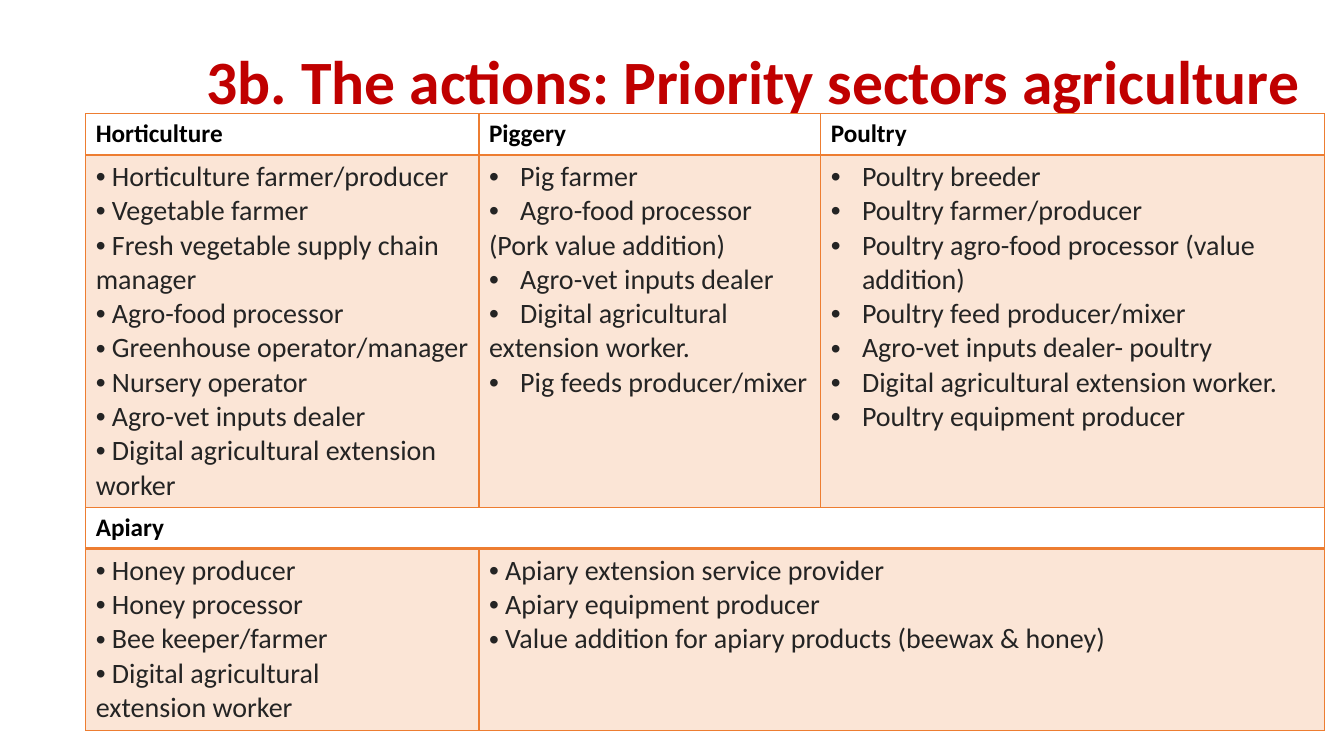
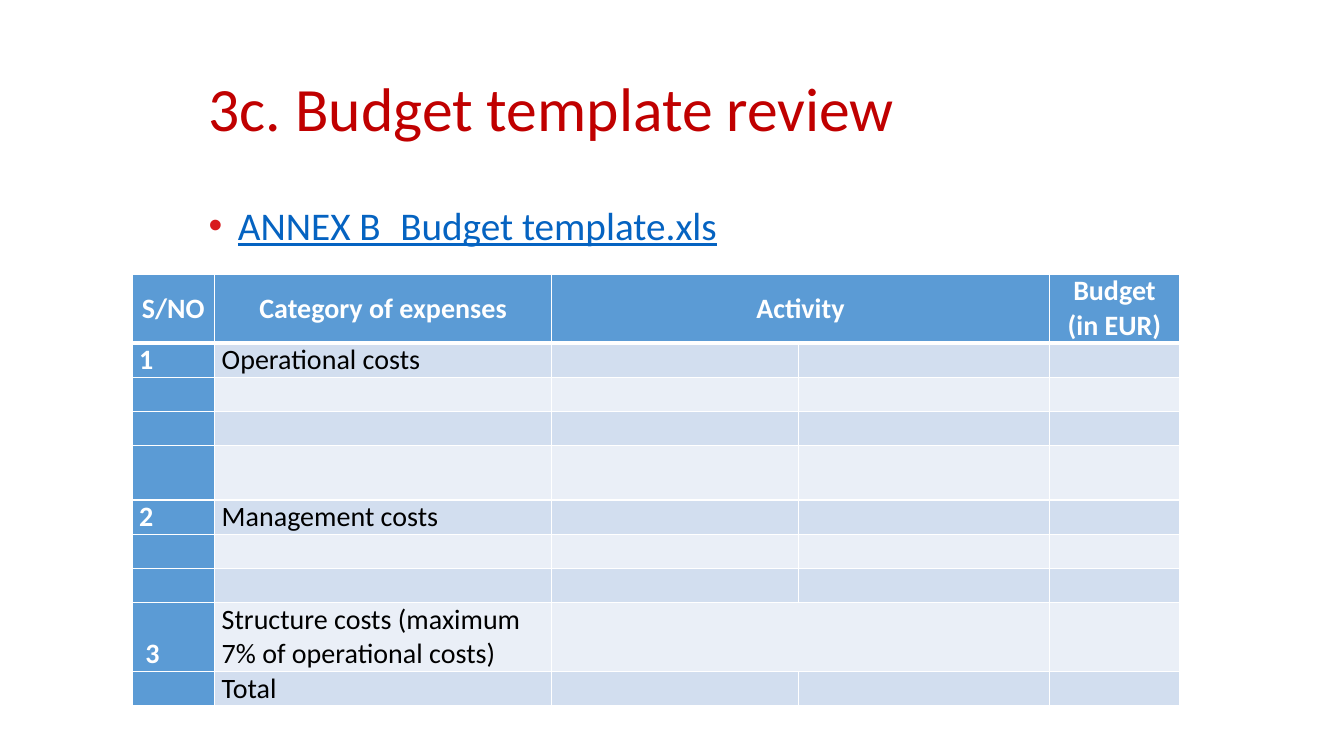
from dataclasses import dataclass
from typing import NamedTuple, Optional

from lxml.etree import SubElement
from pptx import Presentation
from pptx.dml.color import RGBColor
from pptx.enum.text import MSO_ANCHOR as Anchor, MSO_AUTO_SIZE as AutoSize, PP_ALIGN as Align
from pptx.oxml.ns import qn
from pptx.util import Inches, Pt

FONT = "Calibri"
RED = RGBColor(0xC0, 0x00, 0x00)
BULLET_RED = RGBColor(0xD8, 0x1A, 0x1C)
LINK = RGBColor(0x05, 0x63, 0xC1)
BLACK = RGBColor(0x00, 0x00, 0x00)
INK = RGBColor(0x24, 0x24, 0x24)
WHITE = RGBColor(0xFF, 0xFF, 0xFF)
ORANGE = RGBColor(0xED, 0x7D, 0x31)
PEACH = RGBColor(0xFB, 0xE5, 0xD6)
BLUE = RGBColor(0x5B, 0x9B, 0xD5)
BANDS = (RGBColor(0xEA, 0xEF, 0xF7), RGBColor(0xD2, 0xDE, 0xEF))


class Box(NamedTuple):
    left: float
    top: float
    width: float
    height: float


class Line(NamedTuple):
    text: str
    bullet: bool = True


@dataclass
class Sector:
    row: int
    col: int
    title: str
    lines: list
    hang: float = 0


SECTORS = [
    Sector(0, 0, "Horticulture", [
        Line("Horticulture farmer/producer"),
        Line("Vegetable farmer"),
        Line("Fresh vegetable supply chain manager"),
        Line("Agro-food processor"),
        Line("Greenhouse operator/manager"),
        Line("Nursery operator"),
        Line("Agro-vet inputs dealer"),
        Line("Digital agricultural extension worker"),
    ]),
    Sector(0, 1, "Piggery", [
        Line("Pig farmer"),
        Line("Agro-food processor"),
        Line("(Pork value addition)", False),
        Line("Agro-vet inputs dealer"),
        Line("Digital agricultural"),
        Line("extension worker.", False),
        Line("Pig feeds producer/mixer"),
    ], 0.31),
    Sector(0, 2, "Poultry", [
        Line("Poultry breeder"),
        Line("Poultry farmer/producer"),
        Line("Poultry agro-food processor (value addition)"),
        Line("Poultry feed producer/mixer"),
        Line("Agro-vet inputs dealer- poultry"),
        Line("Digital agricultural extension worker."),
        Line("Poultry equipment producer"),
    ], 0.31),
    Sector(2, 0, "Apiary", [
        Line("Honey producer"),
        Line("Honey processor"),
        Line("Bee keeper/farmer"),
        Line("Digital agricultural"),
        Line("extension worker", False),
    ]),
    Sector(2, 1, "", [
        Line("Apiary extension service provider"),
        Line("Apiary equipment producer"),
        Line("Value addition for apiary products (beewax & honey)"),
    ]),
]

BUDGET_HEADS = ("S/NO", "Category of expenses", "Activity", "", "Budget (in EUR)")
BUDGET_ROWS = {
    1: ("1", "Operational costs"),
    5: ("2", "Management costs"),
    8: (" 3", "Structure costs (maximum 7% of operational costs)"),
    9: ("", "Total"),
}


def write(p, text: str, *, size: float, color: RGBColor, bold: bool = False,
          underline: bool = False, align: Align = Align.LEFT, spacing: float = 1,
          bullet: bool = False, bullet_color: Optional[RGBColor] = None,
          hang: float = 0) -> None:
    """Fill a paragraph with one formatted run."""
    p.alignment, p.line_spacing, p.space_before = align, spacing, Pt(0)
    pr = p._p.get_or_add_pPr()
    if bullet:
        pr.set("marL", str(Inches(hang)))
        pr.set("indent", str(-Inches(hang)))
        if bullet_color:
            SubElement(SubElement(pr, qn("a:buClr")), qn("a:srgbClr"), val=str(bullet_color))
        SubElement(pr, qn("a:buFont"), typeface="Arial")
        SubElement(pr, qn("a:buChar"), char="•")
    r = p.add_run()
    r.text = text
    f = r.font
    f.name, f.size, f.bold, f.underline = FONT, Pt(size), bold, underline
    f.color.rgb = color


def place(sp, box: Box):
    """Move a placeholder and return its text frame."""
    sp.left, sp.top, sp.width, sp.height = map(Inches, box)
    tf = sp.text_frame
    tf.word_wrap, tf.auto_size = True, AutoSize.NONE
    return tf


def add_slide(prs, layout: int, title: str, box: Box, bold: bool = False):
    """Add a slide with a red title."""
    s = prs.slides.add_slide(prs.slide_layouts[layout])
    tf = place(s.shapes.title, box)
    tf.vertical_anchor = Anchor.MIDDLE
    write(tf.paragraphs[0], title, size=44, color=RED, bold=bold, spacing=0.9)
    return s


def add_grid(s, left: float, top: float, cols: list, rows: list):
    """Add an unstyled table with the given column widths and row heights."""
    box = Box(left, top, sum(cols), sum(rows))
    tbl = s.shapes.add_table(len(rows), len(cols), *map(Inches, box)).table
    tbl.first_row = tbl.horz_banding = False
    for col, width in zip(tbl.columns, cols):
        col.width = Inches(width)
    for row, height in zip(tbl.rows, rows):
        row.height = Inches(height)
    return tbl


def paint(cell, fill: RGBColor, border: RGBColor, top: float = 1, bottom: float = 1) -> None:
    """Set the borders and fill of a cell."""
    pr = cell._tc.get_or_add_tcPr()
    for side, width in (("L", 1), ("R", 1), ("T", top), ("B", bottom)):
        ln = SubElement(pr, qn(f"a:ln{side}"), w=str(Pt(width)))
        SubElement(SubElement(ln, qn("a:solidFill")), qn("a:srgbClr"), val=str(border))
    cell.fill.solid()
    cell.fill.fore_color.rgb = fill


def sectors_slide(prs) -> None:
    """Build the priority sectors slide."""
    s = add_slide(prs, 5, "3b. The actions: Priority sectors agriculture",
                  Box(1.95, 0.13, 11.07, 1.41), bold=True)
    tbl = add_grid(s, 0.85, 1.13, [3.9, 3.39, 5], [0.4, 3.5, 0.4, 1.8])
    tbl.cell(2, 0).merge(tbl.cell(2, 2))
    tbl.cell(3, 1).merge(tbl.cell(3, 2))
    for i in range(4):
        head = i % 2 == 0
        for j in range(3):
            paint(tbl.cell(i, j), WHITE if head else PEACH, ORANGE,
                  top=1 if head else 2, bottom=2 if head else 1)
    for sector in SECTORS:
        if sector.title:
            p = tbl.cell(sector.row, sector.col).text_frame.paragraphs[0]
            write(p, sector.title, size=18, color=BLACK, bold=True)
        tf = tbl.cell(sector.row + 1, sector.col).text_frame
        for k, line in enumerate(sector.lines):
            p = tf.add_paragraph() if k else tf.paragraphs[0]
            lead = " " if line.bullet and not sector.hang else ""
            write(p, lead + line.text, size=20, color=INK, bullet=line.bullet, hang=sector.hang)


def budget_slide(prs) -> None:
    """Build the budget template slide."""
    s = add_slide(prs, 1, "3c. Budget template review", Box(1.97, 0.38, 9.45, 1.45))
    tf = place(s.placeholders[1], Box(1.97, 2, 9.45, 4.76))
    write(tf.paragraphs[0], "ANNEX B_Budget template.xls", size=28, color=LINK, underline=True,
          spacing=0.9, bullet=True, bullet_color=BULLET_RED, hang=0.29)
    heights = [0.68, *[0.34] * 3, 0.54, *[0.34] * 3, 0.68, 0.34]
    tbl = add_grid(s, 1.31, 2.72, [0.82, 3.34, 2.45, 2.49, 1.29], heights)
    for i in (0, 8):
        tbl.cell(i, 2).merge(tbl.cell(i, 3))
    for i in range(len(heights)):
        head = i == 0
        texts = BUDGET_HEADS if head else BUDGET_ROWS.get(i, ())
        for j in range(5):
            cell = tbl.cell(i, j)
            strong = head or j == 0
            paint(cell, BLUE if strong else BANDS[i % 2], WHITE,
                  top=3 if i == 1 else 1, bottom=3 if head else 1)
            cell.margin_left = cell.margin_right = Inches(0.07)
            cell.margin_top = cell.margin_bottom = 0
            cell.vertical_anchor = Anchor.MIDDLE if head else Anchor.BOTTOM
            p = cell.text_frame.paragraphs[0]
            if j < len(texts) and texts[j]:
                write(p, texts[j], size=20, color=WHITE if strong else BLACK, bold=strong,
                      align=Align.CENTER if head else Align.LEFT)
            else:
                SubElement(p._p, qn("a:endParaRPr"), sz="1200")


def main() -> None:
    """Build and save the presentation."""
    prs = Presentation()
    prs.slide_width, prs.slide_height = Inches(13.33), Inches(7.5)
    sectors_slide(prs)
    budget_slide(prs)
    prs.save("out.pptx")


if __name__ == "__main__":
    main()
